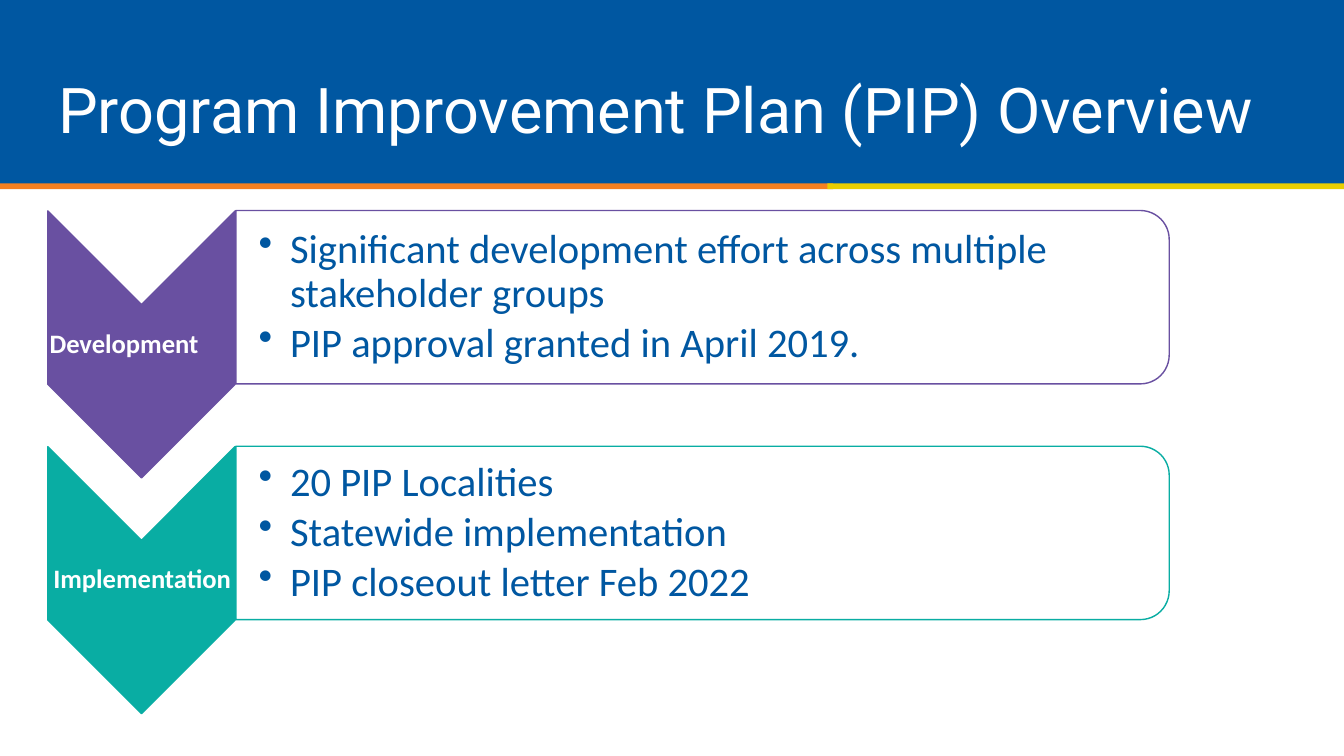
from dataclasses import dataclass

from lxml.etree import SubElement
from pptx import Presentation
from pptx.dml.color import RGBColor
from pptx.enum.shapes import MSO_SHAPE
from pptx.enum.text import MSO_ANCHOR, PP_ALIGN
from pptx.oxml.ns import qn
from pptx.shapes.autoshape import Shape
from pptx.slide import Slide
from pptx.text.text import _Paragraph as Paragraph
from pptx.util import Cm, Pt


@dataclass(frozen=True)
class Theme:
    """Colours, fonts and type sizes of the slide."""

    blue: str = "0057A1"
    orange: str = "F58021"
    yellow: str = "E9CE00"
    purple: str = "6950A1"
    teal: str = "09ADA3"
    white: str = "FFFFFF"
    heading_font: str = "Roboto"
    body_font: str = "Calibri"
    title_size: float = 45
    label_size: float = 19
    bullet_size: float = 29


@dataclass(frozen=True)
class Frame:
    """Position and size in centimetres."""

    left: float
    top: float
    width: float
    height: float

    def lengths(self) -> tuple[Cm, Cm, Cm, Cm]:
        """Return the four values as lengths."""
        return Cm(self.left), Cm(self.top), Cm(self.width), Cm(self.height)


@dataclass(frozen=True)
class Band:
    """A plain coloured bar of the header."""

    frame: Frame
    color: str


@dataclass(frozen=True)
class Phase:
    """A chevron with its label and bullet panel."""

    label: str
    align: PP_ALIGN
    color: str
    bullets: tuple[str, ...]


THEME = Theme()
PHASE_PITCH = 5.94
BANDS = (
    Band(Frame(0, 0, 33.87, 4.72), THEME.blue),
    Band(Frame(0, 4.62, 21, 0.15), THEME.orange),
    Band(Frame(20.85, 4.62, 13.02, 0.15), THEME.yellow),
)
PHASES = (
    Phase("Development", PP_ALIGN.LEFT, THEME.purple, (
        "Significant development effort across multiple stakeholder groups",
        "PIP approval granted in April 2019.",
    )),
    Phase("Implementation", PP_ALIGN.CENTER, THEME.teal, (
        "20 PIP Localities",
        "Statewide implementation",
        "PIP closeout letter Feb 2022",
    )),
)


def add_block(page: Slide, kind: MSO_SHAPE, frame: Frame, fill: str, line: str = "") -> Shape:
    """Draw a filled preset shape, outlined when a line colour is given."""
    block = page.shapes.add_shape(kind, *frame.lengths())
    block.shadow.inherit = False
    block.fill.solid()
    block.fill.fore_color.rgb = RGBColor.from_string(fill)
    if line:
        block.line.color.rgb = RGBColor.from_string(line)
        block.line.width = Pt(1)
    else:
        block.line.fill.background()
    return block


def add_text(page: Slide, frame: Frame, lines: tuple[str, ...], font: str, size: float,
             color: str, insets: tuple[float, float], space_after: float = 0,
             bold: bool = False, align: PP_ALIGN = PP_ALIGN.LEFT, bulleted: bool = False) -> None:
    """Write paragraphs in a middle-anchored box; insets are left, then the other sides."""
    text = page.shapes.add_textbox(*frame.lengths()).text_frame
    text.word_wrap = True
    text.vertical_anchor = MSO_ANCHOR.MIDDLE
    text.margin_left = Cm(insets[0])
    text.margin_top = text.margin_right = text.margin_bottom = Cm(insets[1])
    for index, line in enumerate(lines):
        para = text.paragraphs[0] if index == 0 else text.add_paragraph()
        para.text = line
        para.alignment = align
        para.line_spacing = 0.9
        para.space_after = Pt(space_after)
        if bulleted:
            add_bullet(para)
        para.font.name = font
        para.font.size = Pt(size)
        para.font.bold = bold
        para.font.color.rgb = RGBColor.from_string(color)


def add_bullet(para: Paragraph) -> None:
    """Give a paragraph a hanging round bullet."""
    properties = para._p.get_or_add_pPr()
    properties.set("marL", str(Cm(0.79)))
    properties.set("indent", str(Cm(-0.79)))
    SubElement(properties, qn("a:buChar"), char="•")


def add_phase(page: Slide, phase: Phase, offset: float) -> None:
    """Draw one phase, moved down by the offset."""
    chevron = add_block(page, MSO_SHAPE.CHEVRON, Frame(0.2, 6.32 + offset, 6.73, 4.72),
                        phase.color, phase.color)
    chevron.rotation = 90
    add_text(page, Frame(1.22, 7.67 + offset, 4.72, 2.03), (phase.label,), THEME.body_font,
             THEME.label_size, THEME.white, (0.03, 0.03), 6.65, True, phase.align)
    panel = add_block(page, MSO_SHAPE.ROUND_2_SAME_RECTANGLE,
                      Frame(15.52, -4.27 + offset, 4.37, 23.52), THEME.white, phase.color)
    panel.rotation = 90
    panel_color = panel.fill._xPr.find(qn("a:solidFill"))[0]
    SubElement(panel_color, qn("a:alpha"), val="90000")
    add_text(page, Frame(5.94, 5.51 + offset, 23.32, 3.96), phase.bullets, THEME.body_font,
             THEME.bullet_size, THEME.blue, (0.58, 0.05), 4.35, bulleted=True)


def main() -> None:
    """Build the slide and save it."""
    deck = Presentation()
    deck.slide_width, deck.slide_height = Cm(33.87), Cm(19.05)
    page = deck.slides.add_slide(deck.slide_layouts[6])
    for band in BANDS:
        add_block(page, MSO_SHAPE.RECTANGLE, band.frame, band.color)
    add_text(page, Frame(1.22, 1.02, 31.42, 3.68), ("Program Improvement Plan (PIP) Overview",),
             THEME.heading_font, THEME.title_size, THEME.white, (0.25, 0.13))
    for index, phase in enumerate(PHASES):
        add_phase(page, phase, index * PHASE_PITCH)
    deck.save("out.pptx")


if __name__ == "__main__":
    main()
